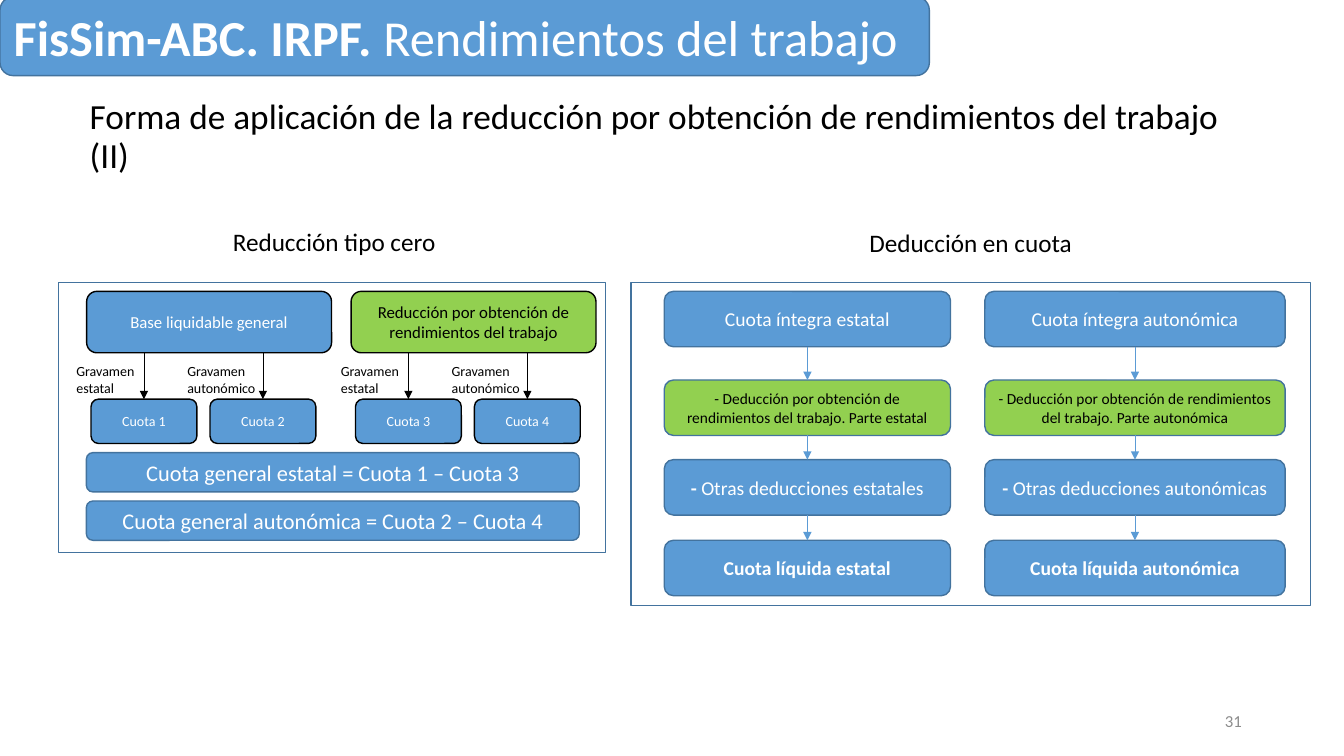
import dataclasses

import lxml.etree
import pptx
import pptx.dml.color
import pptx.enum.shapes
import pptx.enum.text
import pptx.oxml.ns
import pptx.util

ALIGN = pptx.enum.text.PP_ALIGN
ANCHOR = pptx.enum.text.MSO_ANCHOR
FORM = pptx.enum.shapes.MSO_SHAPE
LINK = pptx.enum.shapes.MSO_CONNECTOR


@dataclasses.dataclass(frozen=True)
class Theme:
    font: str = "Calibri"
    blue: str = "5B9BD5"
    green: str = "92D050"
    edge: str = "43739E"
    black: str = "000000"
    white: str = "FFFFFF"
    grey: str = "8C8C8C"
    banner: float = 36
    title: float = 25.2
    head: float = 18
    sum: float = 16
    step: float = 14
    base: float = 12
    note: float = 11
    small: float = 10


THEME = Theme()


# Grid of 40 columns by 22.5 rows, three cells to the inch
def cell(count):
    return pptx.util.Inches(count / 3)


def place(*lengths):
    return [cell(length) for length in lengths]


def color(code):
    return pptx.dml.color.RGBColor.from_string(code)


# Text: each run is a pair of wording and boldness
def write(shape, runs, size, ink, align=ALIGN.CENTER, anchor=ANCHOR.MIDDLE):
    frame = shape.text_frame
    frame.word_wrap = True
    frame.vertical_anchor = anchor
    para = frame.paragraphs[0]
    para.alignment = align
    for words, bold in runs:
        run = para.add_run()
        run.text = words
        run.font.name = THEME.font
        run.font.size = pptx.util.Pt(size)
        run.font.bold = bold
        run.font.color.rgb = color(ink)
    return para


def label(shapes, at, words, size, ink=THEME.black, align=ALIGN.LEFT,
          anchor=ANCHOR.TOP):
    text = shapes.add_textbox(*place(*at))
    write(text, [(words, False)], size, ink, align, anchor)


# Boxes, frames and arrows
def shell(shapes, form, at, fill, edge):
    shape = shapes.add_shape(form, *place(*at))
    shape.shadow.inherit = False
    if fill:
        shape.fill.solid()
        shape.fill.fore_color.rgb = color(fill)
    else:
        shape.fill.background()
    shape.line.color.rgb = color(edge)
    shape.line.width = pptx.util.Pt(1)
    return shape


def box(shapes, at, runs, size, fill=THEME.blue, edge=THEME.edge,
        align=ALIGN.CENTER):
    shape = shell(shapes, FORM.ROUNDED_RECTANGLE, at, fill, edge)
    ink = THEME.black if fill == THEME.green else THEME.white
    write(shape, runs, size, ink, align)
    return shape


def arrow(shapes, start, end, ink, source, target):
    line = shapes.add_connector(LINK.STRAIGHT, *place(*start, *end))
    if source:
        line.begin_connect(source, 2)
    line.end_connect(target, 0)
    line.line.color.rgb = color(ink)
    line.line.width = pptx.util.Pt(0.5)
    tag = pptx.oxml.ns.qn
    lxml.etree.SubElement(line.line._get_or_add_ln(), tag("a:tailEnd"),
                          type="triangle")
    lxml.etree.SubElement(line._element.spPr, tag("a:effectLst"))


def panel(slide, at, head, spot):
    shapes = slide.shapes.add_group_shape().shapes
    shell(shapes, FORM.RECTANGLE, at, None, THEME.edge)
    label(shapes, spot, head, THEME.head, align=ALIGN.CENTER)
    return shapes


# Left panel: two bases, each split into state and regional shares
def zero(slide):
    shapes = panel(slide, (1.74, 8.4, 16.29, 8.04), "Reducción tipo cero",
                   (1.86, 6.6, 16.17, 1.2))
    bases = [("Base liquidable general", THEME.blue),
             ("Reducción por obtención de rendimientos del trabajo",
              THEME.green)]
    taxes = [("Gravamen estatal", -0.6, 2.49),
             ("Gravamen autonómico", 2.7, 2.82)]
    for i, (words, fill) in enumerate(bases):
        left = 2.58 + 7.87 * i
        box(shapes, (left, 8.67, 7.29, 1.83), [(words, False)], THEME.base,
            fill, THEME.black)
        for j, (tax, shift, width) in enumerate(taxes):
            label(shapes, (left + shift, 10.65, width, 1.32), tax,
                  THEME.small)
            spot = left + 0.13 + 3.54 * j
            share = box(shapes, (spot, 11.88, 3.15, 1.32),
                        [(f"Cuota {2 * i + j + 1}", False)], THEME.small,
                        edge=THEME.black)
            mid = spot + 3.15 / 2
            arrow(shapes, (mid, 10.5), (mid, 11.88), THEME.black, None, share)
    sums = ["Cuota general estatal = Cuota 1 – Cuota 3",
            "Cuota general autonómica = Cuota 2 – Cuota 4"]
    for i, words in enumerate(sums):
        box(shapes, (2.57, 13.47 + 1.44 * i, 14.67, 1.17), [(words, False)],
            THEME.sum)


# Right panel: one chain of four steps for each administration
def credit(slide):
    shapes = panel(slide, (18.78, 8.4, 20.22, 9.63), "Deducción en cuota",
                   (18.78, 6.63, 20.22, 1.2))
    chains = [(19.77, 8.52, "estatal", "estatales"),
              (29.31, 8.94, "autonómica", "autonómicas")]
    for left, width, one, many in chains:
        note = ("- Deducción por obtención de rendimientos del trabajo. "
                f"Parte {one}")
        steps = [
            (8.67, [(f"Cuota íntegra {one}", False)], THEME.step, THEME.blue),
            (11.31, [(note, False)], THEME.note, THEME.green),
            (13.68, [("- ", True), (f"Otras deducciones {many}", False)],
             THEME.step, THEME.blue),
            (16.08, [(f"Cuota líquida {one}", True)], THEME.step, THEME.blue),
        ]
        last = None
        for top, runs, size, fill in steps:
            step = box(shapes, (left, top, width, 1.65), runs, size, fill)
            if last:
                mid = left + width / 2
                arrow(shapes, (mid, top - 0.75), (mid, top), THEME.blue,
                      last, step)
            last = step


def main():
    deck = pptx.Presentation()
    deck.slide_width, deck.slide_height = place(40, 22.5)
    slide = deck.slides.add_slide(deck.slide_layouts[5])

    # Title
    title = slide.shapes.title
    title.left, title.top, title.width, title.height = place(
        2.37, 3.24, 35.46, 1.71)
    title.text_frame.auto_size = pptx.enum.text.MSO_AUTO_SIZE.NONE
    words = ("Forma de aplicación de la reducción por obtención de "
             "rendimientos del trabajo (II)")
    para = write(title, [(words, False)], THEME.title, THEME.black, ALIGN.LEFT)
    para.line_spacing = 0.9

    # Page number, panels and banner
    label(slide.shapes, (28.26, 20.85, 9, 1.2), "31", THEME.base, THEME.grey,
          ALIGN.RIGHT, ANCHOR.MIDDLE)
    credit(slide)
    zero(slide)
    box(slide.shapes, (0, -0.09, 27.66, 2.34),
        [("FisSim-ABC. IRPF. ", True), ("Rendimientos del trabajo", False)],
        THEME.banner, align=ALIGN.LEFT)
    deck.save("out.pptx")


if __name__ == "__main__":
    main()
